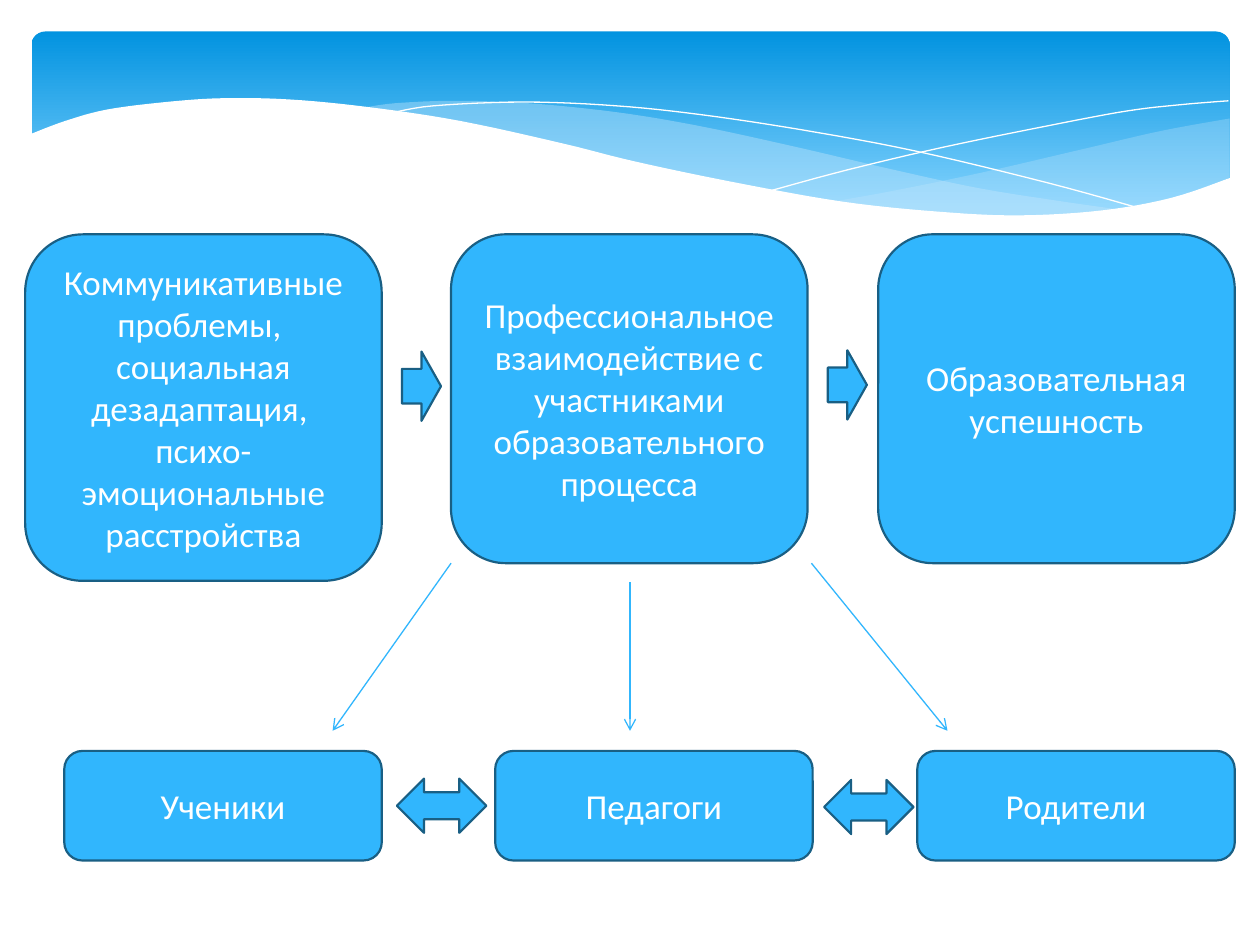
"""Build a slide on the path from communication problems to success in education."""
from dataclasses import dataclass
from lxml.etree import SubElement as Sub
from pptx import Presentation
from pptx.dml.color import RGBColor as RGB
from pptx.enum.shapes import MSO_CONNECTOR as Link, MSO_SHAPE as Kind
from pptx.enum.text import MSO_ANCHOR as Anchor, PP_ALIGN as Align
from pptx.oxml.ns import qn
from pptx.util import Inches, Pt


@dataclass(frozen=True)
class Theme:
    blue: RGB = RGB.from_string("31B6FD")
    edge: RGB = RGB.from_string("195F84")
    white: RGB = RGB.from_string("FFFFFF")
    pale: RGB = RGB.from_string("C6E7FC")
    top: RGB = RGB.from_string("0293E0")
    base: RGB = RGB.from_string("83D3FE")
    font: str = "Calibri"
    size: Pt = Pt(20)
    rim: Pt = Pt(1.25)
    thin: Pt = Pt(0.75)


def smooth(knots, steps=6):
    """Return points on a Catmull-Rom curve through the knots."""
    ends = [knots[0], *knots, knots[-1]]
    dots = [knots[0]]
    for a, b, c, d in zip(ends, ends[1:], ends[2:], ends[3:]):
        for step in range(1, steps + 1):
            t = step / steps
            dots.append(tuple(
                q + t / 2 * (r - p + t * (2 * p - 5 * q + 4 * r - s + t * (3 * (q - r) + s - p)))
                for p, q, r, s in zip(a, b, c, d)))
    return dots


def block(kind, left, top, width, height, lines=()):
    """Add a blue shape with centred paragraphs."""
    shape = slide.shapes.add_shape(kind, Inches(left), Inches(top), Inches(width), Inches(height))
    shape.shadow.inherit = False
    shape.fill.solid()
    shape.fill.fore_color.rgb = theme.blue
    shape.line.color.rgb = theme.edge
    shape.line.width = theme.rim
    frame = shape.text_frame
    frame.word_wrap = True
    frame.vertical_anchor = Anchor.MIDDLE
    for i, line in enumerate(lines):
        para = frame.add_paragraph() if i else frame.paragraphs[0]
        para.alignment = Align.CENTER
        run = para.add_run()
        run.text = line
        run.font.name = theme.font
        run.font.size = theme.size
        run.font.color.rgb = theme.white


theme = Theme()
deck = Presentation()
deck.slide_width, deck.slide_height = Inches(10), Inches(7.5)
slide = deck.slides.add_slide(deck.slide_layouts[6])

band = slide.shapes.add_shape(Kind.ROUNDED_RECTANGLE, Inches(0.25), Inches(0.25), Inches(9.51), Inches(1.56))
band.adjustments[0] = 0.07
band.shadow.inherit = False
band.line.fill.background()
band.fill.gradient()
band.fill.gradient_angle = 270
for stop, spot, color in zip(band.fill.gradient_stops, (0, 0.9), (theme.top, theme.base)):
    stop.position = spot
    stop.color.rgb = color

waves = [
    ([[(9.76, 0.94), (9.21, 1.04), (8.61, 1.18), (7.79, 1.37), (7.06, 1.52), (6.61, 1.6)],
      [(6.61, 1.6), (7.19, 1.67), (7.81, 1.72), (8.35, 1.72), (8.89, 1.66), (9.35, 1.56), (9.76, 1.41)]],
     theme.pale, 29),
    ([[(8.93, 1.67), (8.37, 1.59), (7.75, 1.49), (7.06, 1.34), (6.29, 1.16), (5.55, 1), (4.89, 0.89),
       (4.2, 0.82), (3.61, 0.8), (3.13, 0.82), (2.86, 0.86)],
      [(2.86, 0.86), (3.42, 0.94), (4.04, 1.06), (4.49, 1.16), (5.3, 1.35), (6.01, 1.5), (6.65, 1.61),
       (7.22, 1.68), (7.85, 1.72), (8.38, 1.72), (8.93, 1.67)]],
     theme.pale, 40),
    ([[(3.09, 0.9), (3.44, 0.84), (4.16, 0.81), (4.89, 0.84), (5.56, 0.91), (6.36, 1.03), (7.27, 1.2),
       (8.31, 1.45), (9.07, 1.66)]], None, 0),
    ([[(6.13, 1.51), (6.72, 1.35), (7.48, 1.17), (8.36, 0.99), (8.95, 0.88), (9.38, 0.83), (9.75, 0.8)]], None, 0),
    ([[(9.77, 1.41), (9.3, 1.57), (8.75, 1.67), (8.09, 1.71), (7.44, 1.68), (6.68, 1.6), (5.79, 1.44),
       (5.03, 1.28), (4.47, 1.14), (3.65, 0.96), (2.92, 0.85), (2.3, 0.79), (1.77, 0.78), (1.32, 0.81),
       (0.85, 0.87), (0.52, 0.96), (0.23, 1.07)],
      [(0.23, 1.07), (0.23, 2.24)], [(0.23, 2.24), (9.77, 2.24)]],
     theme.white, 100),
]
for parts, color, alpha in waves:
    dots = [(Inches(x), Inches(y)) for part in parts for x, y in smooth(part)]
    pen = slide.shapes.build_freeform(*dots[0])
    pen.add_line_segments(dots[1:], close=color is not None)
    wave = pen.convert_to_shape()
    wave.shadow.inherit = False
    if color is None:
        wave.fill.background()
        wave.line.color.rgb = theme.white
        wave.line.width = Pt(0)
    else:
        wave.fill.solid()
        wave.fill.fore_color.rgb = color
        wave.line.fill.background()
        tint = wave.fill._xPr.find(qn("a:solidFill"))[0]
        Sub(tint, qn("a:alpha"), val=str(alpha * 1000))

stages = [
    (3.58, 2.61, ["Профессиональное взаимодействие с участниками образовательного процесса"]),
    (0.2, 2.75, ["Коммуникативные проблемы, ", "социальная дезадаптация, ", "психо-эмоциональные расстройства"]),
    (6.97, 2.61, ["Образовательная успешность"]),
]
for left, height, lines in stages:
    block(Kind.ROUNDED_RECTANGLE, left, 1.86, 2.83, height, lines)
for left, top in [(3.19, 2.79), (6.57, 2.78)]:
    block(Kind.RIGHT_ARROW, left, top, 0.31, 0.55)
for left, name in [(3.93, "Педагоги"), (0.51, "Ученики"), (7.28, "Родители")]:
    block(Kind.ROUNDED_RECTANGLE, left, 5.96, 2.52, 0.87, [name])
for left, top in [(3.15, 6.18), (6.54, 6.19)]:
    block(Kind.LEFT_RIGHT_ARROW, left, top, 0.71, 0.43)

for x, y, end in [(3.58, 4.47, 2.64), (6.44, 4.47, 7.52), (5, 4.62, 5)]:
    arrow = slide.shapes.add_connector(Link.STRAIGHT, Inches(x), Inches(y), Inches(end), Inches(5.8))
    arrow.line.color.rgb = theme.blue
    arrow.line.width = theme.thin
    Sub(arrow.line._get_or_add_ln(), qn("a:tailEnd"), type="arrow")
    Sub(arrow._element.spPr, qn("a:effectLst"))

deck.save("out.pptx")
